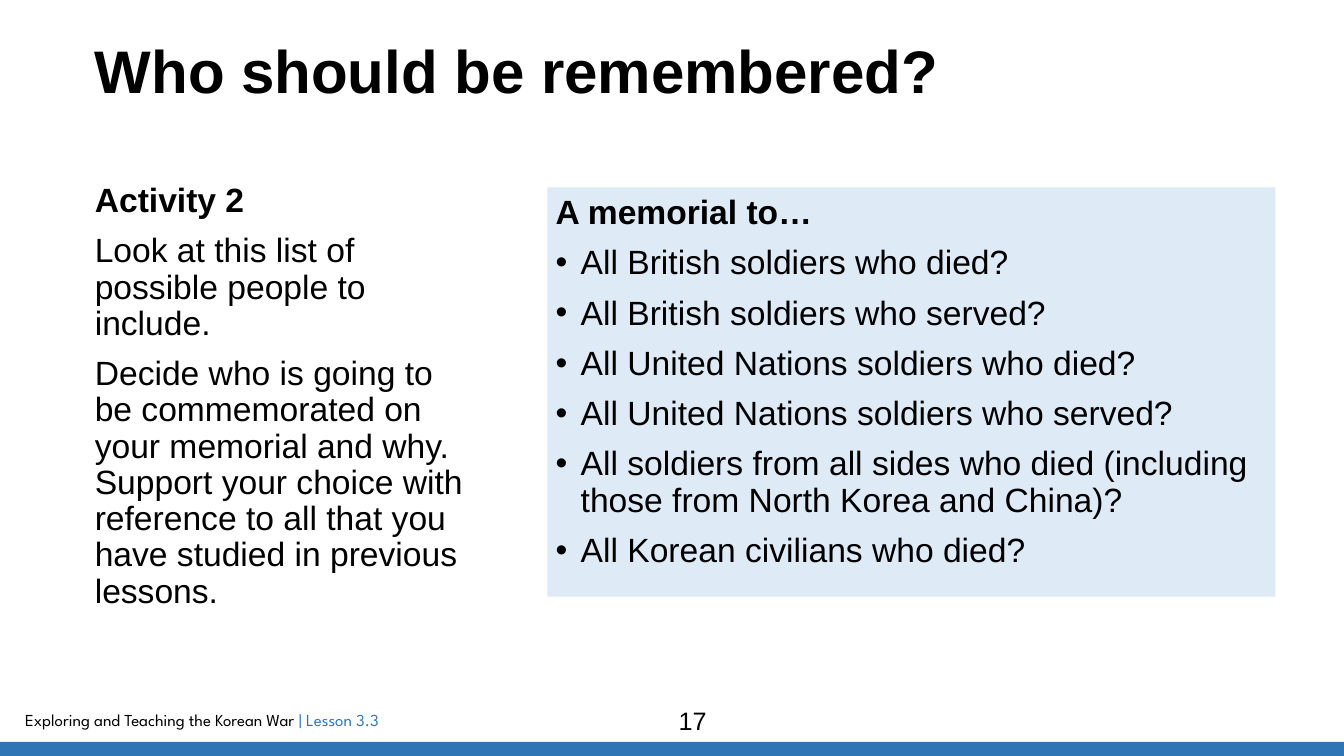
from lxml import etree
from pptx import Presentation
from pptx.dml.color import RGBColor
from pptx.enum.shapes import MSO_SHAPE
from pptx.enum.text import MSO_ANCHOR, MSO_AUTO_SIZE, PP_ALIGN
from pptx.oxml.ns import qn
from pptx.util import Pt

PX = 9144
RECT = MSO_SHAPE.RECTANGLE
TOP, MID = MSO_ANCHOR.TOP, MSO_ANCHOR.MIDDLE
LEFT, MID_X = PP_ALIGN.LEFT, PP_ALIGN.CENTER
FIXED = MSO_AUTO_SIZE.NONE
BLUE, PALE, WHITE, BLACK = "2E75B6", "DEEBF7", "FFFFFF", "000000"


def paint(fill, tone):
    fill.solid()
    fill.fore_color.rgb = RGBColor.from_string(tone)


def write(shape, lines, box, size=24, face="Arial", pad=(0, 0, 0, 0),
          align=LEFT, anchor=TOP, lead=0.9, gap=10):
    shape.left, shape.top, shape.width, shape.height = [n * PX for n in box]
    frame = shape.text_frame
    frame.word_wrap, frame.auto_size = True, FIXED
    frame.vertical_anchor = anchor
    (frame.margin_left, frame.margin_top,
     frame.margin_right, frame.margin_bottom) = [n * PX for n in pad]
    for i, (mark, runs) in enumerate(lines):
        para = frame.add_paragraph() if i else frame.paragraphs[0]
        para.alignment, para.line_spacing = align, lead
        para.space_before, para.space_after = Pt(gap if i else 0), Pt(0)
        props = para._p.get_or_add_pPr()
        props.set("marL", str(25 * PX if mark else 0))
        props.set("indent", str(-25 * PX if mark else 0))
        if mark:
            etree.SubElement(props, qn("a:buFont")).set("typeface", "Arial")
            etree.SubElement(props, qn("a:buChar")).set("char", mark)
        else:
            etree.SubElement(props, qn("a:buNone"))
        for text, bold, tone in runs:
            run = para.add_run()
            run.text = text
            run.font.name, run.font.size = face, Pt(size)
            run.font.bold = bold
            paint(run.font.fill, tone)


deck = Presentation()
deck.slide_width, deck.slide_height = 1333 * PX, 750 * PX
slide = deck.slides.add_slide(deck.slide_layouts[3])
shapes = slide.shapes
title, task, list_box = slide.placeholders

foot = shapes.add_textbox(0, 0, PX, PX)
write(foot, [("", [("Exploring and Teaching the Korean War ", False, BLACK),
                   ("| Lesson 3.3", False, BLUE)])],
      (15, 699, 782, 30), size=12, face="League Spartan",
      pad=(10, 5, 10, 5), lead=1)

band = shapes.add_shape(RECT, 0, 736 * PX, 1333 * PX, 14 * PX)
band.shadow.inherit = False
paint(band.fill, BLUE)
band.line.fill.background()

page = shapes.add_textbox(0, 0, PX, PX)
write(page, [("", [("17", False, BLACK)])], (433, 695, 508, 40), size=18,
      pad=(10, 5, 10, 5), align=MID_X, anchor=MID, lead=1)

write(title, [("", [("Who should be remembered?", True, BLACK)])],
      (94, 41, 1239, 96), size=42.9)

groups = [
    "All British soldiers who died?",
    "All British soldiers who served?",
    "All United Nations soldiers who died?",
    "All United Nations soldiers who served?",
    "All soldiers from all sides who died (including those from North Korea "
    "and China)?",
    "All Korean civilians who died?",
]
paint(list_box.fill, PALE)
write(list_box, [("", [("A memorial to…", True, BLACK)])]
      + [("•", [(group, False, BLACK)]) for group in groups],
      (543, 186, 722, 406), pad=(8, 8, 8, 0))

steps = [
    "Look at this list of possible people to include.",
    "Decide who is going to be commemorated on your memorial and why. "
    "Support your choice with reference to all that you have studied in "
    "previous lessons.",
]
paint(task.fill, WHITE)
write(task, [("", [("Activity 2", True, BLACK)])]
      + [("", [(step, False, BLACK)]) for step in steps],
      (94, 182, 376, 476))

deck.save("out.pptx")
